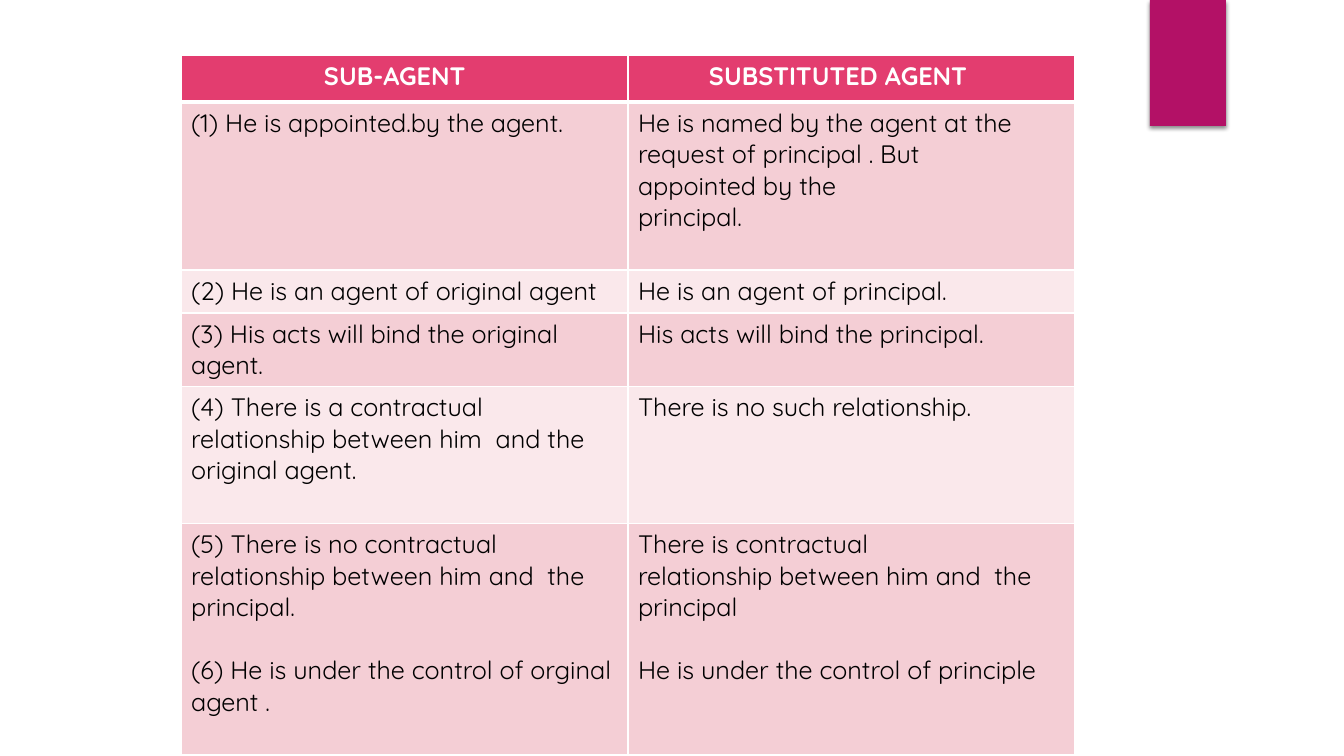
from lxml import etree
from pptx import Presentation
from pptx.dml.color import RGBColor
from pptx.enum.shapes import MSO_SHAPE
from pptx.oxml import parse_xml
from pptx.oxml.ns import qn
from pptx.util import Pt

HEADINGS = [("SUB-AGENT", 143), ("SUBSTITUTED AGENT", 81)]
COMPARISONS = [
    (["(1) He is appointed.by the agent."],
     ["He is named by the agent at the request of principal . But",
      "appointed by the", "principal."]),
    (["(2) He is an agent of original agent"],
     ["He is an agent of principal."]),
    (["(3) His acts will bind the original agent."],
     ["His acts will bind the principal."]),
    (["(4) There is a contractual relationship between him  and the original agent."],
     ["There is no such relationship."]),
    (["(5) There is no contractual",
      "relationship between him and  the principal.",
      "(6) He is under the control of orginal agent ."],
     ["There is contractual",
      "relationship between him and  the principal",
      "He is under the control of principle"]),
]
ROW_HEIGHTS = [47, 168, 43, 73, 137, 231]
COLUMN_WIDTH = 447
TABLE_LEFT, TABLE_TOP = 181, 55
POINT_SIX_GAP = 22.5

FONT = "Quicksand"
WHITE = RGBColor(0xFF, 0xFF, 0xFF)
BLACK = RGBColor(0x00, 0x00, 0x00)
MAGENTA = RGBColor(0xB3, 0x11, 0x66)
HEADER_PINK = RGBColor(0xE3, 0x3D, 0x6F)
BANDS = [RGBColor(0xF4, 0xCE, 0xD5), RGBColor(0xFA, 0xE8, 0xEB)]
RECTANGLE = MSO_SHAPE.RECTANGLE
DRAWING_NS = "http://schemas.openxmlformats.org/drawingml/2006/main"
TAB_SHADOW = (
    f'<a:effectLst xmlns:a="{DRAWING_NS}">'
    '<a:outerShdw blurRad="38100" dist="25400" dir="5400000" rotWithShape="0">'
    '<a:srgbClr val="000000"><a:alpha val="45000"/></a:srgbClr>'
    '</a:outerShdw></a:effectLst>'
)


def px(length):
    return round(length * 914400 / 100.8)


def add_borders(cell, top, bottom):
    properties = cell._tc.get_or_add_tcPr()
    for side, width in (("L", 1), ("R", 1), ("T", top), ("B", bottom)):
        line = etree.SubElement(properties, qn(f"a:ln{side}"), w=str(Pt(width)))
        fill = etree.SubElement(line, qn("a:solidFill"))
        etree.SubElement(fill, qn("a:srgbClr"), val=str(WHITE))


def fill_cell(cell, lines, background, color, bold):
    cell.fill.solid()
    cell.fill.fore_color.rgb = background
    for index, line in enumerate(lines):
        frame = cell.text_frame
        paragraph = frame.add_paragraph() if index else frame.paragraphs[0]
        if line.startswith(("(6)", "He is under")):
            paragraph.space_before = Pt(POINT_SIX_GAP)
        run = paragraph.add_run()
        run.text = line
        run.font.name = FONT
        run.font.size = Pt(18)
        run.font.bold = bold
        run.font.color.rgb = color


def add_corner_tab(slide):
    tab = slide.shapes.add_shape(RECTANGLE, px(1150), 0, px(76), px(126))
    tab.fill.solid()
    tab.fill.fore_color.rgb = MAGENTA
    tab.line.fill.background()
    tab._element.spPr.append(parse_xml(TAB_SHADOW))


def add_comparison(slide):
    table = slide.shapes.add_table(
        len(ROW_HEIGHTS), len(HEADINGS), px(TABLE_LEFT), px(TABLE_TOP),
        px(COLUMN_WIDTH * len(HEADINGS)), px(sum(ROW_HEIGHTS))).table
    for row, height in zip(table.rows, ROW_HEIGHTS):
        row.height = px(height)
    for column, (heading, indent) in enumerate(HEADINGS):
        table.columns[column].width = px(COLUMN_WIDTH)
        cell = table.cell(0, column)
        cell.margin_left = px(indent)
        add_borders(cell, 1, 3)
        fill_cell(cell, [heading], HEADER_PINK, WHITE, True)
    for row, sides in enumerate(COMPARISONS, 1):
        for column, lines in enumerate(sides):
            cell = table.cell(row, column)
            add_borders(cell, 3 if row == 1 else 1, 1)
            fill_cell(cell, lines, BANDS[(row - 1) % 2], BLACK, False)


def main():
    deck = Presentation()
    deck.slide_width, deck.slide_height = px(1344), px(756)
    slide = deck.slides.add_slide(deck.slide_layouts[6])
    add_corner_tab(slide)
    add_comparison(slide)
    deck.save("out.pptx")


if __name__ == "__main__":
    main()
